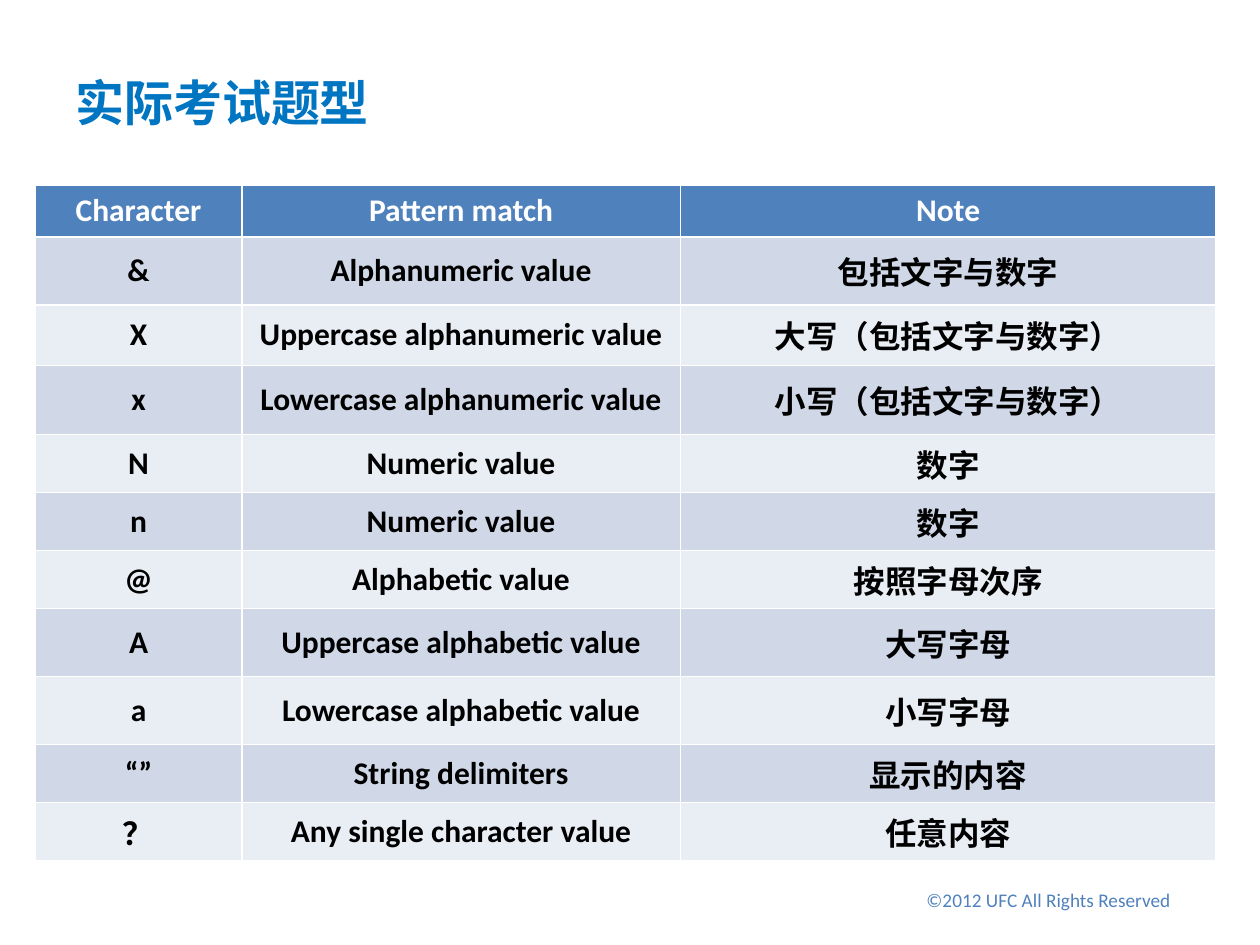
"""Build a slide with a table of format characters and their meanings."""
from lxml import etree
from pptx import Presentation
from pptx.dml.color import RGBColor
from pptx.enum.text import MSO_ANCHOR, PP_ALIGN
from pptx.oxml.ns import qn
from pptx.util import Inches, Pt

LEFT, CENTER, RIGHT = PP_ALIGN.LEFT, PP_ALIGN.CENTER, PP_ALIGN.RIGHT
TOP, MIDDLE = MSO_ANCHOR.TOP, MSO_ANCHOR.MIDDLE
LATIN, CJK = "Calibri", "Noto Sans CJK SC"
HEADER_FILL, BANDS = "4F81BD", ("E9EDF4", "D0D8E8")

ROWS = [
    (0.41, "Character", "Pattern match", "Note"),
    (0.54, "&", "Alphanumeric value", "包括文字与数字"),
    (0.48, "X", "Uppercase alphanumeric value", "大写（包括文字与数字）"),
    (0.55, "x", "Lowercase alphanumeric value", "小写（包括文字与数字）"),
    (0.46, "N", "Numeric value", "数字"),
    (0.46, "n", "Numeric value", "数字"),
    (0.46, "@", "Alphabetic value", "按照字母次序"),
    (0.54, "A", "Uppercase alphabetic value", "大写字母"),
    (0.54, "a", "Lowercase alphabetic value", "小写字母"),
    (0.46, "“”", "String delimiters", "显示的内容"),
    (0.46, "？", "Any single character value", "任意内容"),
]
COL_WIDTHS = (1.64, 3.48, 4.25)


def rgb(value):
    return RGBColor.from_string(value)


def write(tf, text, align, color, **formats):
    p = tf.paragraphs[0]
    p.alignment = align
    r = p.add_run()
    r.text = text
    r.font.color.rgb = rgb(color)
    for name, value in formats.items():
        setattr(r.font, name, value)
    ea = etree.SubElement(r.font._element, qn("a:ea"))
    ea.set("typeface", CJK)


prs = Presentation()
prs.slide_width, prs.slide_height = Inches(10), Inches(7.5)
s = prs.slides.add_slide(prs.slide_layouts[6])

TEXTS = [
    ((0.5, 0.3, 9, 1.01), "实际考试题型", LEFT, MIDDLE, "0075C2",
     dict(size=Pt(28), name=CJK, bold=True)),
    ((6.57, 7, 2.82, 0.3), "©2012 UFC All Rights Reserved", RIGHT, TOP, "4F81BD",
     dict(size=Pt(11), name=LATIN)),
]
for box, text, align, anchor, color, formats in TEXTS:
    tf = s.shapes.add_textbox(*map(Inches, box)).text_frame
    tf.word_wrap = True
    tf.vertical_anchor = anchor
    write(tf, text, align, color, **formats)

height = sum(row[0] for row in ROWS)
table = s.shapes.add_table(
    len(ROWS), len(COL_WIDTHS),
    Inches(0.28), Inches(1.47), Inches(sum(COL_WIDTHS)), Inches(height)).table
for column, width in zip(table.columns, COL_WIDTHS):
    column.width = Inches(width)
for i, (row_height, *texts) in enumerate(ROWS):
    table.rows[i].height = Inches(row_height)
    for j, text in enumerate(texts):
        cell = table.cell(i, j)
        cell.fill.solid()
        cell.fill.fore_color.rgb = rgb(BANDS[i % 2] if i else HEADER_FILL)
        cell.vertical_anchor = MIDDLE if i else TOP
        write(cell.text_frame, text, CENTER, "000000" if i else "FFFFFF",
              size=Pt(18), name=LATIN, bold=True)

prs.save("out.pptx")
